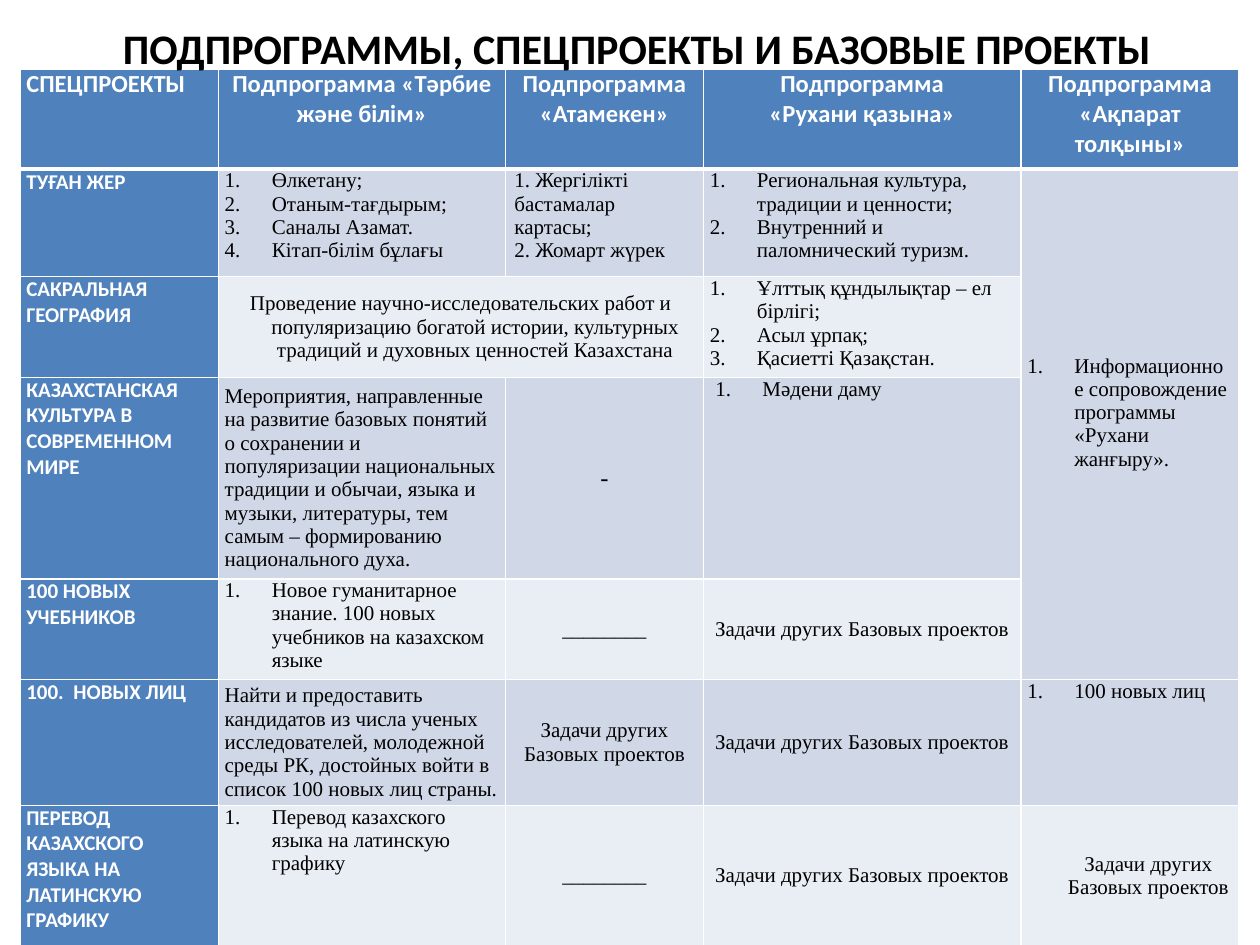
import dataclasses

import lxml.etree
import pptx
import pptx.dml.color
import pptx.enum.text
import pptx.oxml.ns
import pptx.util

Cm = pptx.util.Cm
Pt = pptx.util.Pt
LEFT, CENTER = pptx.enum.text.PP_ALIGN.LEFT, pptx.enum.text.PP_ALIGN.CENTER
TOP, MIDDLE = pptx.enum.text.MSO_ANCHOR.TOP, pptx.enum.text.MSO_ANCHOR.MIDDLE

COLORS = {
    "accent": "4F81BD",
    "odd": "D0D8E8",
    "even": "E9EDF4",
    "light": "FFFFFF",
    "dark": "000000",
}


@dataclasses.dataclass
class Cell:
    lines: list
    align: int = LEFT
    anchor: int = TOP
    start: int = 0
    margin: float = 0
    indent: float = 0
    size: int = 12
    bottom: float = 0


def numbered(*lines, start=1, margin=0.95, **options):
    return Cell(lines, start=start, margin=margin, indent=-0.95, **options)


def centered(text, **options):
    return Cell([text], align=CENTER, anchor=MIDDLE, **options)


def prose(text):
    return Cell([text], anchor=MIDDLE)


OTHER_TASKS = "Задачи других Базовых проектов"
NO_TASKS = "________"

HEADINGS = [
    Cell(["СПЕЦПРОЕКТЫ"], size=14),
    *(Cell(lines, align=CENTER, size=14) for lines in (
        ["Подпрограмма «Тәрбие және білім»"],
        ["Подпрограмма «Атамекен»"],
        ["Подпрограмма", "«Рухани қазына»"],
        ["Подпрограмма «Ақпарат толқыны»"],
    )),
]

PROJECTS = [
    [Cell(["ТУҒАН ЖЕР"]),
     numbered("Өлкетану;", "Отаным-тағдырым;", "Саналы Азамат.", "Кітап-білім бұлағы"),
     Cell(["1. Жергілікті бастамалар картасы;", "2. Жомарт жүрек"], margin=0.05),
     numbered("Региональная культура, традиции и ценности;",
              "Внутренний и паломнический туризм."),
     numbered("Информационное сопровождение программы «Рухани жанғыру».",
              anchor=MIDDLE, bottom=0.47)],
    [Cell(["САКРАЛЬНАЯ ГЕОГРАФИЯ"]),
     centered("Проведение научно-исследовательских работ и популяризацию богатой "
              "истории, культурных традиций и духовных ценностей Казахстана",
              margin=0.58, indent=-0.58),
     None,
     numbered("Ұлттық құндылықтар – ел бірлігі;", "Асыл ұрпақ;", "Қасиетті Қазақстан."),
     None],
    [Cell(["КАЗАХСТАНСКАЯ КУЛЬТУРА В СОВРЕМЕННОМ МИРЕ"]),
     prose("Мероприятия, направленные на развитие базовых понятий о сохранении и "
           "популяризации национальных традиции и обычаи, языка и музыки, литературы, "
           "тем самым – формированию национального духа."),
     centered("-", size=14),
     numbered("Мәдени даму", margin=1.06),
     None],
    [Cell(["100 НОВЫХ УЧЕБНИКОВ"]),
     numbered("Новое гуманитарное знание. 100 новых учебников на казахском языке"),
     centered(NO_TASKS),
     centered(OTHER_TASKS),
     None],
    [numbered("НОВЫХ ЛИЦ", start=100),
     prose("Найти и предоставить кандидатов из числа ученых исследователей, молодежной "
           "среды РК, достойных войти в список 100 новых лиц страны."),
     centered(OTHER_TASKS),
     centered(OTHER_TASKS),
     numbered("100 новых лиц")],
    [Cell(["ПЕРЕВОД КАЗАХСКОГО ЯЗЫКА НА ЛАТИНСКУЮ ГРАФИКУ"]),
     numbered("Перевод казахского языка на латинскую графику"),
     centered(NO_TASKS),
     centered(OTHER_TASKS),
     centered(OTHER_TASKS, margin=0.74)],
]


class Deck:
    label_font = "Calibri"
    body_font = "Times New Roman"

    def __init__(self):
        self.presentation = pptx.Presentation()
        self.presentation.slide_width = Cm(25.4)
        self.presentation.slide_height = Cm(19.05)
        self.slide = self.presentation.slides.add_slide(self.presentation.slide_layouts[5])

    def rgb(self, color):
        return pptx.dml.color.RGBColor.from_string(COLORS[color])

    def run(self, paragraph, text, size, font, color, bold):
        run = paragraph.add_run()
        run.text = text
        run.font.size = Pt(size)
        run.font.name = font
        run.font.bold = bold
        run.font.color.rgb = self.rgb(color)

    def title(self, text, left, top, width, height):
        heading = self.slide.shapes.title
        heading.left, heading.top = Cm(left), Cm(top)
        heading.width, heading.height = Cm(width), Cm(height)
        frame = heading.text_frame
        frame.word_wrap = True
        frame.auto_size = pptx.enum.text.MSO_AUTO_SIZE.NONE
        frame.vertical_anchor = TOP
        frame.paragraphs[0].alignment = CENTER
        self.run(frame.paragraphs[0], text, 24, self.label_font, "dark", True)
        self.slide.shapes._spTree.append(heading._element)

    def border(self, cell, widths):
        properties = cell._tc.get_or_add_tcPr()
        for place, (side, width) in enumerate(widths.items()):
            line = lxml.etree.Element(pptx.oxml.ns.qn(f"a:ln{side}"), w=str(Pt(width)))
            fill = lxml.etree.SubElement(line, pptx.oxml.ns.qn("a:solidFill"))
            lxml.etree.SubElement(fill, pptx.oxml.ns.qn("a:srgbClr"), val=COLORS["light"])
            properties.insert(place, line)

    def paragraph(self, paragraph, text, content, is_label):
        properties = paragraph._p.get_or_add_pPr()
        properties.set("marL", str(Cm(content.margin)))
        properties.set("indent", str(Cm(content.indent)))
        if content.start:
            number = lxml.etree.SubElement(
                properties, pptx.oxml.ns.qn("a:buAutoNum"), type="arabicPeriod")
            if content.start > 1:
                number.set("startAt", str(content.start))
        paragraph.alignment = content.align
        font = self.label_font if is_label else self.body_font
        color = "light" if is_label else "dark"
        self.run(paragraph, text, content.size, font, color, is_label)

    def cell(self, cell, content, fill, is_label):
        cell.margin_left = cell.margin_right = Cm(0.13)
        cell.margin_top, cell.margin_bottom = 0, Cm(content.bottom)
        cell.vertical_anchor = content.anchor
        cell.fill.solid()
        cell.fill.fore_color.rgb = self.rgb(fill)
        for index, text in enumerate(content.lines):
            frame = cell.text_frame
            paragraph = frame.add_paragraph() if index else frame.paragraphs[0]
            self.paragraph(paragraph, text, content, is_label)

    def table(self, rows, left, top, widths, heights, merges):
        table = self.slide.shapes.add_table(
            len(rows), len(widths), Cm(left), Cm(top),
            Cm(sum(widths)), Cm(sum(heights))).table
        table.first_row = table.horz_banding = False
        for column, width in zip(table.columns, widths):
            column.width = Cm(width)
        for row, height in zip(table.rows, heights):
            row.height = Cm(height)
        for first, last in merges:
            table.cell(*first).merge(table.cell(*last))
        for row, contents in enumerate(rows):
            for column, content in enumerate(contents):
                cell = table.cell(row, column)
                is_label = row == 0 or column == 0
                fill = "accent" if is_label else ("even", "odd")[row % 2]
                self.cell(cell, content or Cell([]), fill, is_label)
                self.border(cell, {"L": 1, "R": 1, "T": 3 if row == 1 else 1,
                                   "B": 3 if row == 0 else 1})


def main():
    deck = Deck()
    deck.table([HEADINGS, *PROJECTS], 0.4, 1.4,
               widths=[4, 5.79, 3.99, 6.4, 4.4],
               heights=[2.01, 2.17, 2.03, 4.06, 2.03, 2.54, 2.84],
               merges=[((1, 4), (4, 4)), ((2, 1), (2, 2))])
    deck.title("ПОДПРОГРАММЫ, СПЕЦПРОЕКТЫ И БАЗОВЫЕ ПРОЕКТЫ", 0.94, 0.33, 23.8, 1.27)
    deck.presentation.save("out.pptx")


if __name__ == "__main__":
    main()
